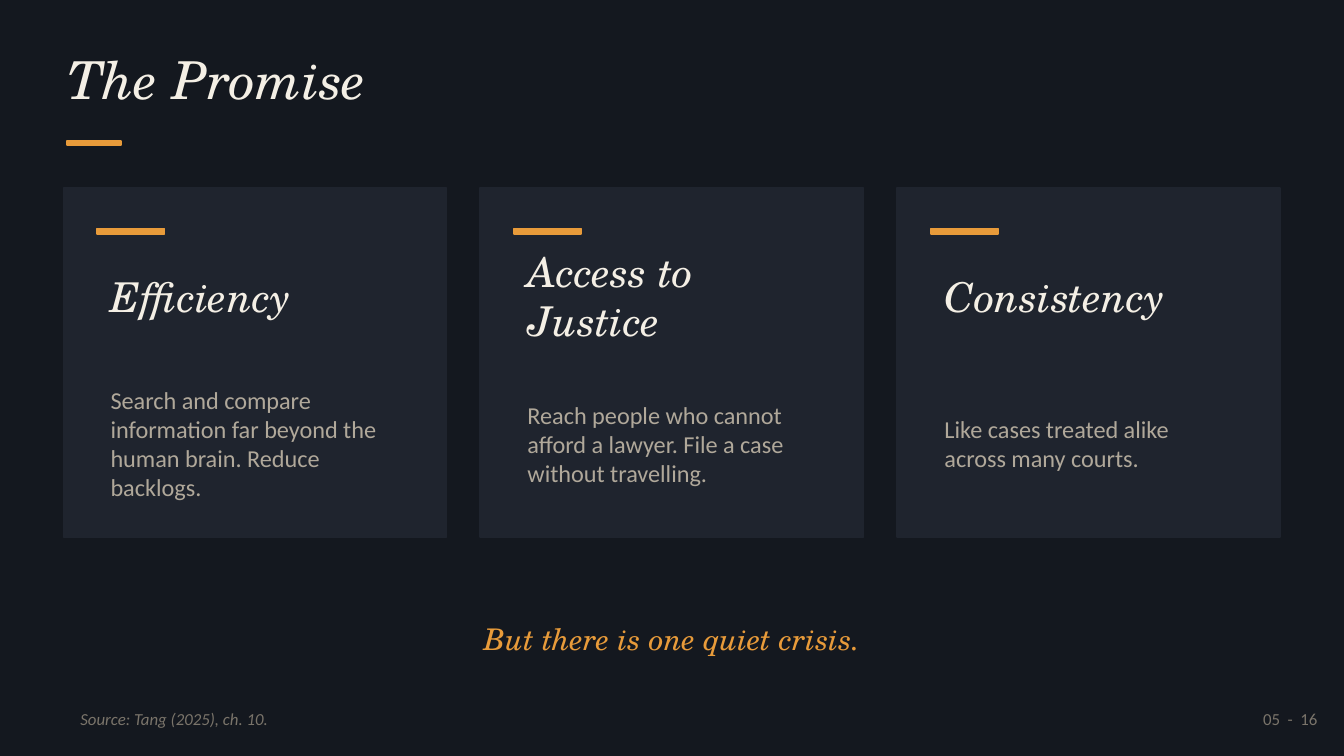
from pptx import Presentation
from pptx.dml.color import RGBColor
from pptx.enum.shapes import MSO_SHAPE
from pptx.enum.text import MSO_ANCHOR, MSO_AUTO_SIZE, PP_ALIGN
from pptx.util import Cm, Pt

NIGHT = RGBColor(0x14, 0x18, 0x1F)
PANEL = RGBColor(0x1F, 0x24, 0x2E)
AMBER = RGBColor(0xE8, 0x9B, 0x3A)
CREAM = RGBColor(0xF4, 0xEF, 0xE5)
SAND = RGBColor(0xB0, 0xA8, 0x9A)
STONE = RGBColor(0x7A, 0x74, 0x6A)

SERIF = "TeX Gyre Schola"
SANS = "Calibri"

TITLE = "The Promise"
CARDS = [
    ("Efficiency",
     "Search and compare information far beyond the human brain. Reduce backlogs."),
    ("Access to Justice",
     "Reach people who cannot afford a lawyer. File a case without travelling."),
    ("Consistency", "Like cases treated alike across many courts."),
]
CLOSING = "But there is one quiet crisis."
SOURCE = "Source: Tang (2025), ch. 10."
PAGE = "05  -  16"

FORMATS = {
    "title": {"name": SERIF, "size": Pt(28), "italic": True, "color": CREAM},
    "heading": {"name": SERIF, "size": Pt(22), "italic": True, "color": CREAM},
    "body": {"name": SANS, "size": Pt(13), "italic": False, "color": SAND},
    "closing": {"name": SERIF, "size": Pt(16), "italic": True, "color": AMBER},
    "source": {"name": SANS, "size": Pt(9), "italic": True, "color": STONE},
    "page": {"name": SANS, "size": Pt(9), "italic": False, "color": STONE},
}

SLIDE_WIDTH, SLIDE_HEIGHT = 25.4, 14.29
MARGIN = 1.27
CARD_TOP, CARD_WIDTH, CARD_HEIGHT = 3.56, 7.24, 6.6
CARD_GAP, CARD_PADDING = 0.64, 0.64


def write(shape, text, style, align=PP_ALIGN.LEFT, anchor=MSO_ANCHOR.MIDDLE):
    frame = shape.text_frame
    frame.word_wrap = True
    frame.auto_size = MSO_AUTO_SIZE.NONE
    frame.vertical_anchor = anchor
    paragraph = frame.paragraphs[0]
    paragraph.alignment = align
    run = paragraph.add_run()
    run.text = text
    for attribute, value in FORMATS[style].items():
        if attribute == "color":
            run.font.color.rgb = value
        else:
            setattr(run.font, attribute, value)


def add_text(slide, box, text, style, align=PP_ALIGN.LEFT):
    shape = slide.shapes.add_textbox(*map(Cm, box))
    write(shape, text, style, align)


def add_block(slide, box, color):
    shape = slide.shapes.add_shape(MSO_SHAPE.RECTANGLE, *map(Cm, box))
    shape.shadow.inherit = False
    shape.fill.solid()
    shape.fill.fore_color.rgb = color
    shape.line.color.rgb = color
    shape.line.width = Pt(1)


def add_title(slide):
    title = slide.shapes.title
    box = (MARGIN, 0.89, SLIDE_WIDTH - 2 * MARGIN, 2.03)
    for attribute, value in zip(("left", "top", "width", "height"), box):
        setattr(title, attribute, Cm(value))
    for side in ("left", "top", "right", "bottom"):
        setattr(title.text_frame, f"margin_{side}", 0)
    write(title, TITLE, "title", anchor=MSO_ANCHOR.TOP)
    add_block(slide, (MARGIN, 2.67, 1.02, 0.08), AMBER)


def add_cards(slide):
    row_width = len(CARDS) * CARD_WIDTH + (len(CARDS) - 1) * CARD_GAP
    first_left = (SLIDE_WIDTH - row_width) / 2
    inner_width = CARD_WIDTH - 2 * CARD_PADDING
    for index, (heading, body) in enumerate(CARDS):
        left = first_left + index * (CARD_WIDTH + CARD_GAP)
        inner_left = left + CARD_PADDING
        add_block(slide, (left, CARD_TOP, CARD_WIDTH, CARD_HEIGHT), PANEL)
        add_block(slide, (inner_left, CARD_TOP + 0.76, 1.27, 0.1), AMBER)
        add_text(slide, (inner_left, CARD_TOP + 1.27, inner_width, 1.52), heading, "heading")
        add_text(slide, (inner_left, CARD_TOP + 3.05, inner_width, 3.55), body, "body")


def main():
    presentation = Presentation()
    presentation.slide_width = Cm(SLIDE_WIDTH)
    presentation.slide_height = Cm(SLIDE_HEIGHT)
    slide = presentation.slides.add_slide(presentation.slide_layouts[5])
    slide.background.fill.solid()
    slide.background.fill.fore_color.rgb = NIGHT

    add_title(slide)
    add_cards(slide)
    add_text(slide, (MARGIN, 11.56, SLIDE_WIDTH - 2 * MARGIN, 1.02),
             CLOSING, "closing", PP_ALIGN.CENTER)
    add_text(slide, (MARGIN, 13.21, 20.32, 0.76), SOURCE, "source")
    add_text(slide, (22.1, 13.21, 3.05, 0.76), PAGE, "page", PP_ALIGN.RIGHT)
    presentation.save("out.pptx")


if __name__ == "__main__":
    main()
